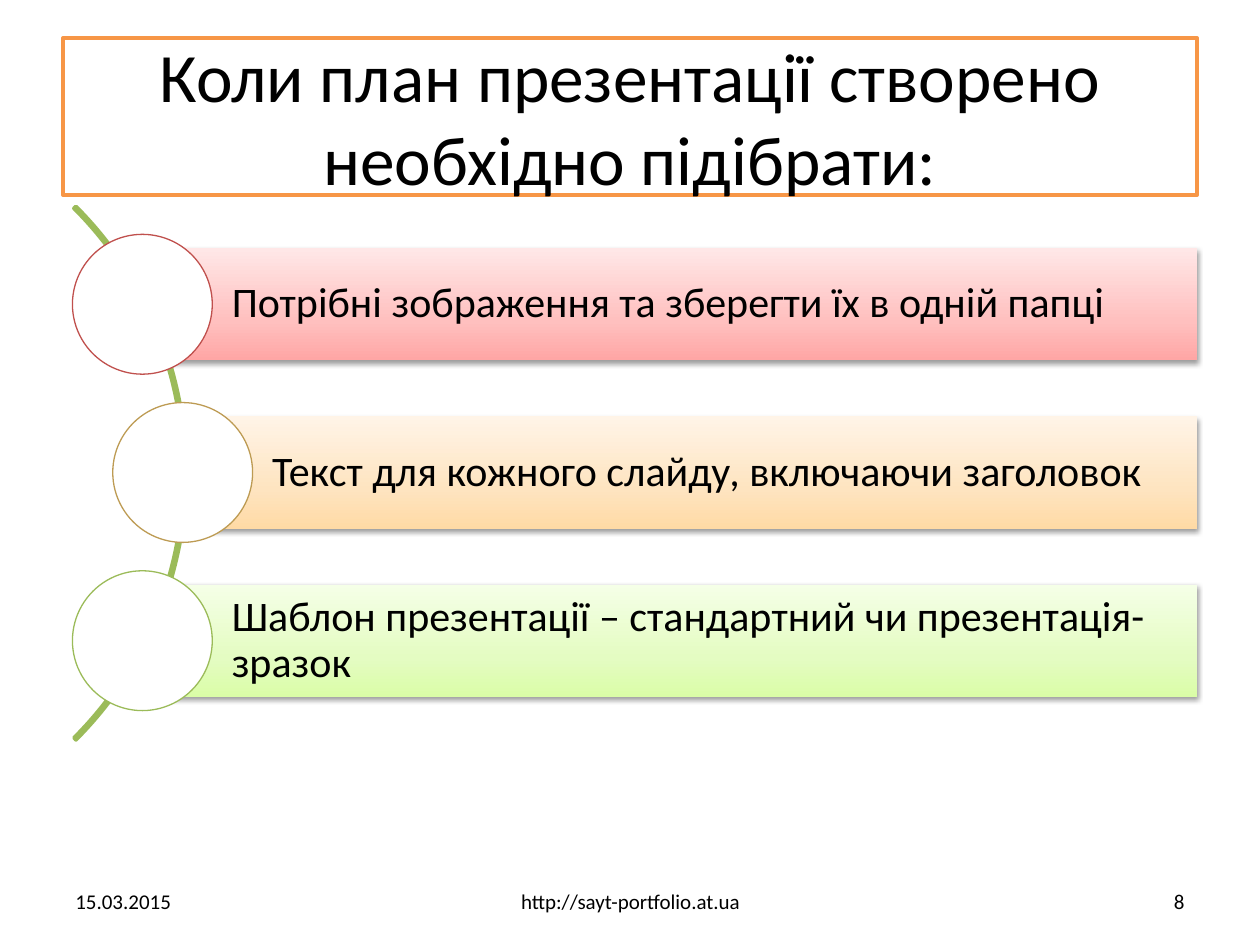
import copy
from dataclasses import dataclass

import pptx
import pptx.dml.color
import pptx.enum.shapes
import pptx.enum.text
import pptx.oxml
import pptx.oxml.ns
import pptx.util
from pptx.dml.color import RGBColor
from pptx.enum.shapes import MSO_SHAPE
from pptx.enum.text import MSO_ANCHOR, PP_ALIGN
from pptx.util import Inches, Pt

FONT = "Calibri"
BLACK = RGBColor(0x00, 0x00, 0x00)
WHITE = RGBColor(0xFF, 0xFF, 0xFF)
ORANGE = RGBColor(0xF7, 0x96, 0x46)
RED = RGBColor(0xC0, 0x50, 0x4D)
TAN = RGBColor(0xBD, 0x9B, 0x53)
GREEN = RGBColor(0x9B, 0xBB, 0x59)
PINKS = (RGBColor(0xFF, 0xA6, 0xA5), RGBColor(0xFF, 0xC0, 0xBF), RGBColor(0xFF, 0xE7, 0xE7))
PEACHES = (RGBColor(0xFF, 0xDA, 0xA5), RGBColor(0xFE, 0xE4, 0xC0), RGBColor(0xFF, 0xF4, 0xE7))
LIMES = (RGBColor(0xDA, 0xFD, 0xA7), RGBColor(0xE4, 0xFC, 0xC2), RGBColor(0xF5, 0xFF, 0xE7))
GRADIENT_STOPS = (0, 0.35, 1)

BAR_TOP, BAR_PITCH, BAR_HEIGHT, BAR_RIGHT = 1.97, 1.335, 0.89, 9.5
CIRCLE_SIZE = 1.11
FOOTER_TOP, FOOTER_HEIGHT = 6.95, 0.4

SHADOW_XML = (
    f'<a:effectLst {pptx.oxml.ns.nsdecls("a")}>'
    '<a:outerShdw blurRad="39370" dist="20320" dir="5400000" rotWithShape="0">'
    '<a:srgbClr val="000000"><a:alpha val="38000"/></a:srgbClr>'
    "</a:outerShdw></a:effectLst>"
)


@dataclass
class Item:
    text: str
    left: float
    gradient: tuple[RGBColor, ...]
    outline: RGBColor


@dataclass
class FooterPart:
    text: str
    left: float
    width: float
    align: PP_ALIGN


ITEMS = [
    Item("Потрібні зображення та зберегти їх в одній папці", 1.13, PINKS, RED),
    Item("Текст для кожного слайду, включаючи заголовок", 1.45, PEACHES, TAN),
    Item("Шаблон презентації – стандартний чи презентація-зразок", 1.13, LIMES, GREEN),
]
FOOTER = [
    FooterPart("15.03.2015", 0.5, 2.33, PP_ALIGN.LEFT),
    FooterPart("http://sayt-portfolio.at.ua", 3.42, 3.17, PP_ALIGN.CENTER),
    FooterPart("8", 7.17, 2.33, PP_ALIGN.RIGHT),
]


def write_text(shape, text: str, size: float, align: PP_ALIGN) -> None:
    frame = shape.text_frame
    frame.text = text
    frame.word_wrap = True
    frame.auto_size = pptx.enum.text.MSO_AUTO_SIZE.NONE
    frame.vertical_anchor = MSO_ANCHOR.MIDDLE
    paragraph = frame.paragraphs[0]
    paragraph.alignment = align
    font = paragraph.runs[0].font
    font.name, font.size = FONT, Pt(size)
    font.color.rgb = BLACK


def add_title(slide, text: str) -> None:
    title = slide.shapes.title
    title.left, title.top = Inches(0.5), Inches(0.3)
    title.width, title.height = Inches(9), Inches(1.25)
    title.fill.solid()
    title.fill.fore_color.rgb = WHITE
    title.line.color.rgb = ORANGE
    title.line.width = Pt(2)
    write_text(title, text, 39.6, PP_ALIGN.CENTER)


def add_arc(slide) -> None:
    arc = slide.shapes.add_shape(
        MSO_SHAPE.BLOCK_ARC, Inches(-4.51), Inches(0.76), Inches(5.99), Inches(5.99)
    )
    for index, value in enumerate((189, 27, 0.004)):
        arc.adjustments[index] = value
    arc.shadow.inherit = False
    arc.fill.background()
    arc.line.color.rgb = GREEN
    arc.line.width = Pt(2)


def fill_gradient(shape, colors: tuple[RGBColor, ...]) -> None:
    """Fill from bottom to top with three colours."""
    shape.fill.gradient()
    shape.fill.gradient_angle = 90
    stop_list = shape.fill._fill._gradFill.gsLst
    stop_list.append(copy.deepcopy(stop_list[-1]))
    for stop, position, color in zip(shape.fill.gradient_stops, GRADIENT_STOPS, colors):
        stop.position = position
        stop.color.rgb = color


def add_item(slide, item: Item, top: float) -> None:
    bar = slide.shapes.add_shape(
        MSO_SHAPE.RECTANGLE, Inches(item.left), Inches(top),
        Inches(BAR_RIGHT - item.left), Inches(BAR_HEIGHT),
    )
    fill_gradient(bar, item.gradient)
    bar.line.fill.background()
    bar._element.spPr.append(pptx.oxml.parse_xml(SHADOW_XML))
    write_text(bar, item.text, 24, PP_ALIGN.LEFT)
    frame = bar.text_frame
    frame.margin_left = Inches(0.71)
    frame.margin_top = frame.margin_right = frame.margin_bottom = Inches(0.07)
    frame.paragraphs[0].line_spacing = 0.9

    circle = slide.shapes.add_shape(
        MSO_SHAPE.OVAL, Inches(item.left - CIRCLE_SIZE / 2),
        Inches(top + (BAR_HEIGHT - CIRCLE_SIZE) / 2),
        Inches(CIRCLE_SIZE), Inches(CIRCLE_SIZE),
    )
    circle.shadow.inherit = False
    circle.fill.solid()
    circle.fill.fore_color.rgb = WHITE
    circle.line.color.rgb = item.outline
    circle.line.width = Pt(0.75)


def add_footer_part(slide, part: FooterPart) -> None:
    box = slide.shapes.add_textbox(
        Inches(part.left), Inches(FOOTER_TOP), Inches(part.width), Inches(FOOTER_HEIGHT)
    )
    write_text(box, part.text, 12, part.align)


def main() -> None:
    presentation = pptx.Presentation()
    presentation.slide_width, presentation.slide_height = Inches(10), Inches(7.5)
    slide = presentation.slides.add_slide(presentation.slide_layouts.get_by_name("Title Only"))
    add_title(slide, "Коли план презентації створено необхідно підібрати:")
    add_arc(slide)
    for row, item in enumerate(ITEMS):
        add_item(slide, item, BAR_TOP + row * BAR_PITCH)
    for part in FOOTER:
        add_footer_part(slide, part)
    presentation.save("out.pptx")


if __name__ == "__main__":
    main()
